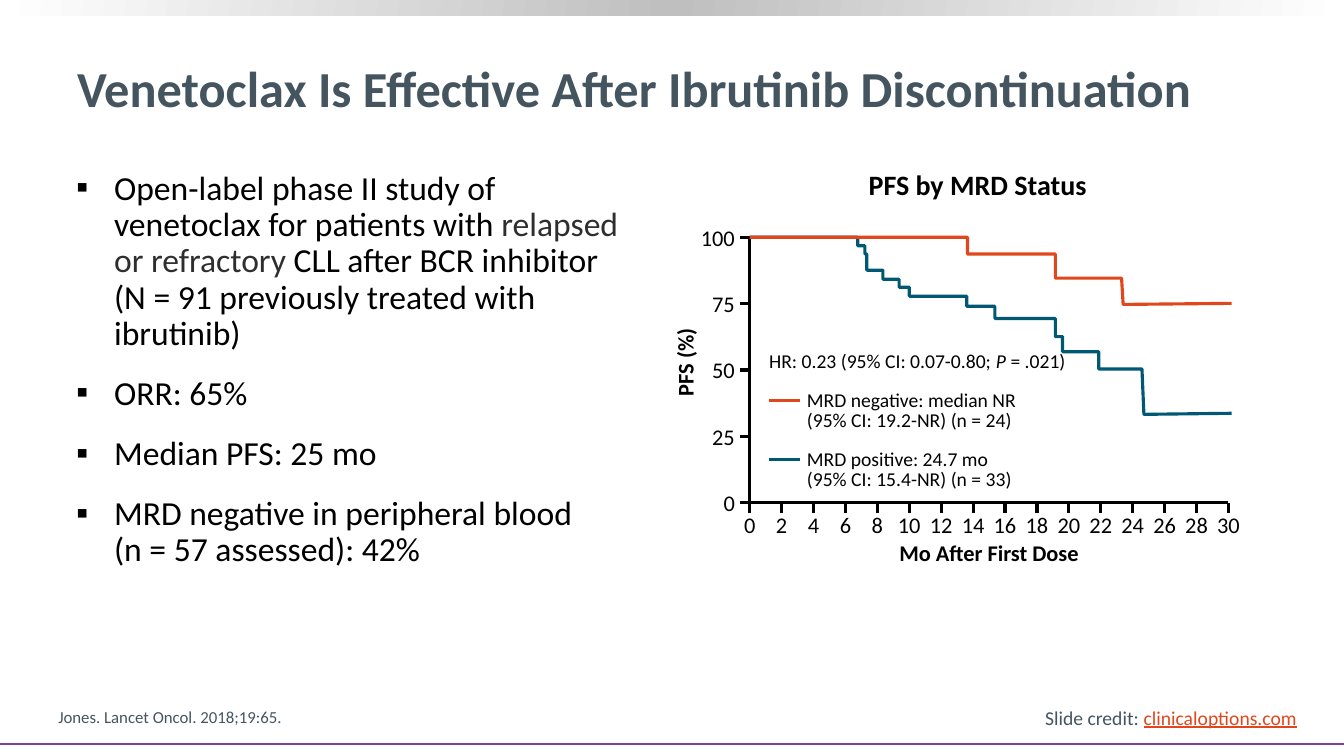
from dataclasses import dataclass, field
from typing import Any

from lxml.etree import SubElement
from pptx import Presentation
from pptx.dml.color import RGBColor
from pptx.enum.shapes import MSO_CONNECTOR, MSO_SHAPE
from pptx.enum.text import MSO_ANCHOR, PP_ALIGN
from pptx.oxml.ns import qn
from pptx.util import Inches, Pt


@dataclass(frozen=True)
class Theme:
    font: str = "Calibri"
    black: str = "000000"
    soft: str = "2E2E2E"
    slate: str = "455560"
    orange: str = "E1471D"
    teal: str = "015873"
    purple: str = "7F3F98"
    band: tuple = ((0, "FFFFFF"), (50000, "BFBFBF"), (100000, "FFFFFF"))
    title: int = 36
    body: int = 24
    heading: int = 20
    axis: int = 16
    small: int = 14
    note: int = 12
    line: float = 2.25
    rule: float = 1.5


@dataclass(frozen=True)
class Box:
    col: float
    row: float
    cols: float
    rows: float


@dataclass(frozen=True)
class Span:
    text: str
    color: str = ""
    font: dict[str, Any] = field(default_factory=dict)


@dataclass(frozen=True)
class Para:
    spans: tuple[Span, ...]
    fmt: dict[str, Any] = field(default_factory=dict)
    indent: int = 0
    bullet: str = ""


@dataclass(frozen=True)
class Curve:
    color: str
    drops: tuple[tuple[float, float], ...]
    tail: tuple[tuple[float, float], ...]


T = Theme()
COLS, ROWS = 160, 90
HANG = 342900
PLOT_COL, PLOT_ROW = 89.25, 59.85
MONTH, PERCENT = 1.9, 0.316
TICK = 1.2
LABEL = Box(0, 0, 4.8, 3.24)
KEY_COL, KEY_COLS = 91.56, 3.72
FLUSH = dict.fromkeys(("margin_left", "margin_top", "margin_right", "margin_bottom"), 0)

prs = Presentation()
prs.slide_width, prs.slide_height = Inches(13.333), Inches(7.5)
s = prs.slides.add_slide(prs.slide_layouts[6])


def x(col: float) -> int:
    return round(prs.slide_width * col / COLS)


def y(row: float) -> int:
    return round(prs.slide_height * row / ROWS)


def place(b: Box) -> tuple[int, int, int, int]:
    return x(b.col), y(b.row), x(b.cols), y(b.rows)


def at(month: float, percent: float) -> tuple[float, float]:
    return PLOT_COL + MONTH * month, PLOT_ROW - PERCENT * percent


def assign(obj: Any, values: dict[str, Any]) -> None:
    for name, value in values.items():
        setattr(obj, name, value)


def add_text(b: Box, paras: list[Para], size: int, color: str = T.black,
             frame: dict[str, Any] | None = None, rotation: int = 0) -> None:
    sp = s.shapes.add_textbox(*place(b))
    sp.rotation = rotation
    tf = sp.text_frame
    assign(tf, {"word_wrap": True} | (frame or {}))
    for i, para in enumerate(paras):
        p = tf.add_paragraph() if i else tf.paragraphs[0]
        pPr = p._p.get_or_add_pPr()
        if para.indent:
            pPr.set("marL", str(para.indent))
            pPr.set("indent", str(-para.indent if para.bullet else 0))
        if para.bullet:
            SubElement(SubElement(pPr, qn("a:buClr")), qn("a:srgbClr"), val=T.black)
            SubElement(pPr, qn("a:buFont"), typeface=T.font)
            SubElement(pPr, qn("a:buChar"), char=para.bullet)
        assign(p, para.fmt | ({} if i else {"space_before": Pt(0)}))
        for span in para.spans:
            for n, text in enumerate(span.text.split("\n")):
                if n:
                    p.add_line_break()
                r = p.add_run()
                r.text = text
                assign(r.font, {"name": T.font, "size": Pt(size)} | span.font)
                r.font.color.rgb = RGBColor.from_string(span.color or color)


def add_line(start: tuple[float, float], end: tuple[float, float],
             color: str = T.black, width: float = T.line) -> None:
    c = s.shapes.add_connector(MSO_CONNECTOR.STRAIGHT, x(start[0]), y(start[1]),
                               x(end[0]), y(end[1]))
    c.line.color.rgb = RGBColor.from_string(color)
    c.line.width = Pt(width)
    SubElement(c._element.spPr, qn("a:effectLst"))


def add_curve(curve: Curve) -> None:
    points, level = [], 100.0
    for month, percent in curve.drops:
        points += [(month, level), (month, percent)]
        level = percent
    cells = [at(*point) for point in ((0, 100), *points, *curve.tail)]
    first, *rest = [(x(col), y(row)) for col, row in cells]
    fb = s.shapes.build_freeform(*first)
    fb.add_line_segments(rest, close=False)
    sp = fb.convert_to_shape()
    sp.shadow.inherit = False
    sp.fill.background()
    sp.line.color.rgb = RGBColor.from_string(curve.color)
    sp.line.width = Pt(T.line)


def add_band(b: Box) -> None:
    sp = s.shapes.add_shape(MSO_SHAPE.RECTANGLE, *place(b))
    sp.shadow.inherit = False
    sp.line.fill.background()
    sp.fill.gradient()
    sp.fill.gradient_angle = 170
    stops = sp._element.spPr.find(".//" + qn("a:gsLst"))
    for stop in list(stops):
        stops.remove(stop)
    for pos, color in T.band:
        SubElement(SubElement(stops, qn("a:gs"), pos=str(pos)), qn("a:srgbClr"), val=color)


def add_label(b: Box, text: str, align: PP_ALIGN, bold: bool = False, rotation: int = 0) -> None:
    para = Para((Span(text, font={"bold": bold}),), {"alignment": align})
    add_text(b, [para], T.axis, frame=FLUSH, rotation=rotation)


def add_axes() -> None:
    add_line(at(0, 100), at(0, 0))
    add_line(at(0, 0), at(30, 0))
    for percent in range(100, -1, -25):
        col, row = at(0, percent)
        add_line((col - TICK, row), (col, row))
        add_label(Box(82.68, row - LABEL.rows / 2, LABEL.cols, LABEL.rows),
                  str(percent), PP_ALIGN.RIGHT)
    for month in range(0, 31, 2):
        col, row = at(month, 0)
        add_line((col, row + TICK), (col, row))
        add_label(Box(col - LABEL.cols / 2, row + 1, LABEL.cols, LABEL.rows),
                  str(month), PP_ALIGN.CENTER)
    add_label(Box(PLOT_COL, 64.2, 30 * MONTH, LABEL.rows), "Mo After First Dose",
              PP_ALIGN.CENTER, True)
    add_label(Box(65.16, 41.52, 32.76, LABEL.rows), "PFS (%)", PP_ALIGN.CENTER, True, 270)


POSITIVE = Curve(T.teal, (
    (6.77, 96.8), (7.22, 93.7), (7.34, 87.6), (8.35, 84.2), (9.36, 81.2), (10, 77.8),
    (13.6, 74), (15.36, 69.4), (19.15, 62.6), (19.6, 56.9), (21.87, 50.4),
), ((24.58, 50.4), (24.7, 33.3), (30.2, 33.7)))
NEGATIVE = Curve(T.orange, ((13.65, 93.7), (19.15, 84.6)),
                 ((23.3, 84.6), (23.4, 74.7), (30.2, 75.1)))

BODY = {"line_spacing": 0.9, "space_before": Pt(10), "space_after": Pt(7)}
FINDINGS = (
    (Span("Open-label phase II study of venetoclax for patients with "),
     Span("relapsed or refractory", T.soft),
     Span(" CLL after BCR inhibitor\n(N = 91 previously treated with ibrutinib)")),
    (Span("ORR: 65%"),),
    (Span("Median PFS: 25 mo"),),
    (Span("MRD negative in peripheral blood\n(n = 57 assessed): 42%"),),
)
EXACT = {"line_spacing": Pt(14)}
KEYS = (
    (47.64, T.orange, "MRD negative: median NR\n(95% CI: 19.2-NR) (n = 24)"),
    (54.72, T.teal, "MRD positive: 24.7 mo\n(95% CI: 15.4-NR) (n = 33)"),
)
HAZARD = Para((Span("HR: 0.23 (95% CI: 0.07-0.80; "), Span("P ", font={"italic": True}),
               Span("= .021)")), EXACT)


def main() -> None:
    add_band(Box(0, 0, COLS, 1.9))
    add_line((0, 88.56), (COLS, 88.56), T.purple, T.rule)
    add_text(Box(123.24, 83.4, 32.6, 4.1), [Para((
        Span("Slide credit: "),
        Span("clinicaloptions.com", T.orange, {"underline": True})))],
        T.small, T.slate, {"word_wrap": False})
    add_curve(POSITIVE)
    add_text(Box(8, 3.1, 142.7, 14.5), [Para((Span(
        "Venetoclax Is Effective After Ibrutinib Discontinuation", font={"bold": True}),))],
        T.title, T.slate, {"vertical_anchor": MSO_ANCHOR.MIDDLE})
    add_text(Box(7.9, 19.8, 69.7, 61.4),
             [Para(spans, BODY, HANG, "▪") for spans in FINDINGS], T.body)
    add_text(Box(82.1, 19.8, 68.6, 61.4), [Para(
        (Span("PFS by MRD Status", font={"bold": True}),),
        BODY | {"alignment": PP_ALIGN.CENTER})], T.heading)
    add_text(Box(5.76, 83.5, 103.1, 3.6), [Para((Span("Jones. Lancet Oncol. 2018;19:65."),))],
             T.note, T.slate, {"vertical_anchor": MSO_ANCHOR.BOTTOM})
    add_axes()
    add_curve(NEGATIVE)
    key_fmt = EXACT | {"space_before": Pt(14)}
    add_text(Box(KEY_COL, 42, 41.3, 16.6),
             [HAZARD] + [Para((Span(text),), key_fmt, HANG) for _, _, text in KEYS],
             T.small, frame=FLUSH)
    for row, color, _ in KEYS:
        add_line((KEY_COL, row), (KEY_COL + KEY_COLS, row), color)
    prs.save("out.pptx")


if __name__ == "__main__":
    main()
